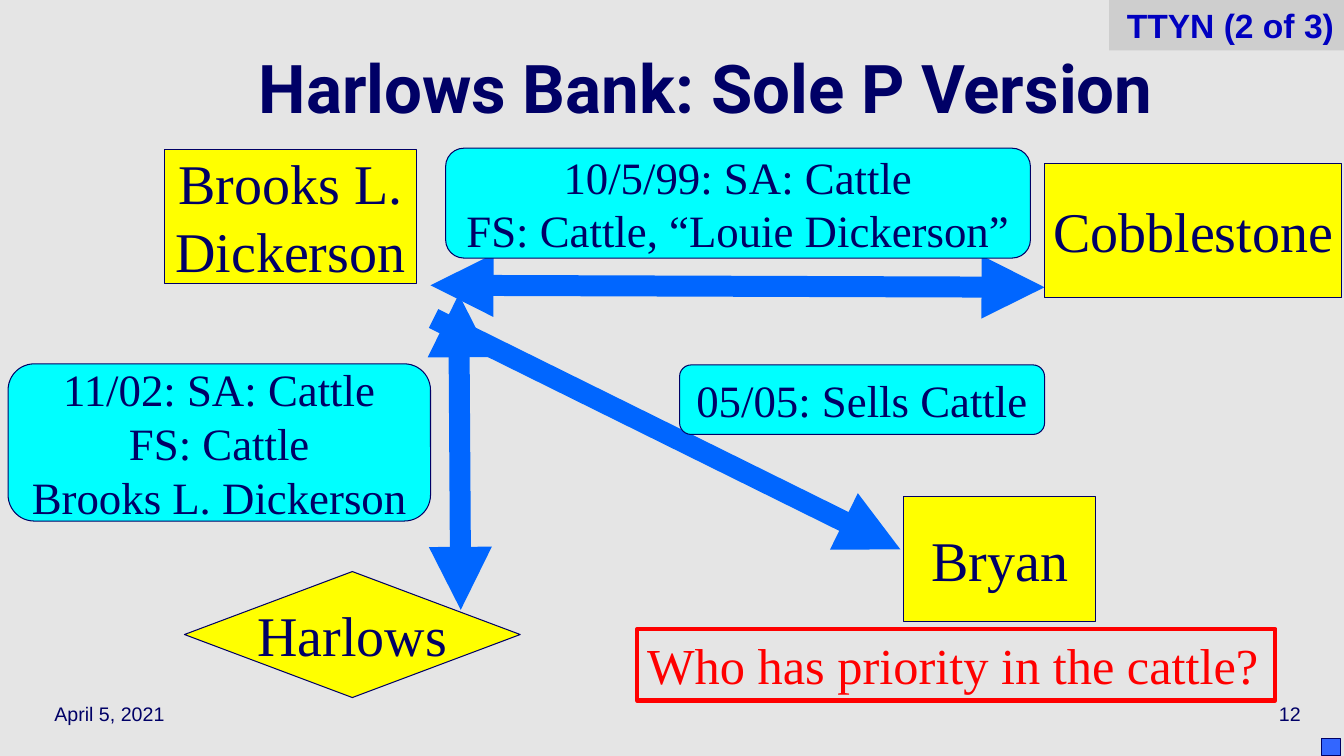
"""Builds the sole proprietor version of the bank priority slide."""
from lxml.etree import SubElement
from pptx import Presentation
from pptx.dml.color import RGBColor
from pptx.enum.shapes import MSO_CONNECTOR, MSO_SHAPE
from pptx.enum.text import MSO_ANCHOR, PP_ALIGN
from pptx.oxml.ns import qn
from pptx.util import Inches, Pt

NAVY = RGBColor(0x00, 0x00, 0x66)
YELLOW = RGBColor(0xFF, 0xFF, 0x00)
CYAN = RGBColor(0x00, 0xFF, 0xFF)
BLUE = RGBColor(0x00, 0x66, 0xFF)
MARKER_BLUE = RGBColor(0x33, 0x66, 0xFF)
TAG_BLUE = RGBColor(0x00, 0x00, 0xC0)
RED = RGBColor(0xFF, 0x00, 0x00)
PALE_GRAY = RGBColor(0xE5, 0xE5, 0xE5)
TAG_GRAY = RGBColor(0xCE, 0xCE, 0xCE)
SERIF = "Times New Roman"

prs = Presentation()
prs.slide_width, prs.slide_height = Inches(13.33), Inches(7.5)
s = prs.slides.add_slide(prs.slide_layouts[6])
s.background.fill.solid()
s.background.fill.fore_color.rgb = PALE_GRAY


def write(sp, lines, size, font=SERIF, color=NAVY, align=PP_ALIGN.CENTER,
          bold=False, anchor=MSO_ANCHOR.MIDDLE, wrap=True):
    tf = sp.text_frame
    tf.word_wrap = wrap
    tf.vertical_anchor = anchor
    for i, line in enumerate(lines):
        p = tf.paragraphs[0] if i == 0 else tf.add_paragraph()
        p.text = line
        p.alignment = align
        p.font.name, p.font.size, p.font.bold = font, Pt(size), bold
        p.font.color.rgb = color


def add_box(kind, at, fill=None, line=NAVY, width=0.75):
    sp = s.shapes.add_shape(kind, *map(Inches, at))
    sp.shadow.inherit = False
    if fill is None:
        sp.fill.background()
    else:
        sp.fill.solid()
        sp.fill.fore_color.rgb = fill
    if line is None:
        sp.line.fill.background()
    else:
        sp.line.color.rgb = line
        sp.line.width = Pt(width)
    return sp


for text, left, align in (("April 5, 2021", 0.44, PP_ALIGN.LEFT),
                          ("12", 10.22, PP_ALIGN.RIGHT)):
    footer = s.shapes.add_textbox(Inches(left), Inches(6.83), Inches(2.78), Inches(0.5))
    write(footer, [text], 14, "Arial", align=align)

title = s.shapes.add_textbox(Inches(0.89), Inches(0.33), Inches(12.22), Inches(1.25))
write(title, ["Harlows Bank: Sole P Version"], 48, "Roboto", bold=True)
title.text_frame.paragraphs[0].line_spacing = 0.7

arrows = [
    ((4.55, 2.92, 4.57, 6.05), ("headEnd", "tailEnd")),
    ((4.27, 2.83, 10.36, 2.85), ("headEnd", "tailEnd")),
    ((4.3, 3.16, 8.93, 5.45), ("tailEnd",)),
]
for ends, heads in arrows:
    arrow = s.shapes.add_connector(MSO_CONNECTOR.STRAIGHT, *map(Inches, ends))
    arrow.line.color.rgb = BLUE
    arrow.line.width = Pt(15)
    for head in heads:
        SubElement(arrow.line._get_or_add_ln(), qn(f"a:{head}"), type="triangle")
    SubElement(arrow._element.spPr, qn("a:effectLst"))

parties = [
    ("Brooks L. Dickerson", MSO_SHAPE.FLOWCHART_PROCESS, (1.63, 1.48, 2.5, 1.33)),
    ("Harlows", MSO_SHAPE.FLOWCHART_DECISION, (1.83, 5.67, 3.33, 1.25)),
    ("Cobblestone", MSO_SHAPE.FLOWCHART_PROCESS, (10.36, 1.62, 2.95, 1.33)),
    ("Bryan", MSO_SHAPE.FLOWCHART_PROCESS, (8.96, 4.93, 1.91, 1.24)),
]
for name, kind, at in parties:
    write(add_box(kind, at, YELLOW), [name], 40, wrap=" " in name)

events = [
    (["11/02: SA: Cattle", "FS: Cattle", "Brooks L. Dickerson"], (0.08, 3.61, 4.19, 1.56)),
    (["10/5/99: SA: Cattle", "FS: Cattle, “Louie Dickerson”"], (4.42, 1.47, 5.8, 1.09)),
    (["05/05: Sells Cattle"], (6.74, 3.62, 3.62, 0.69)),
]
for lines, at in events:
    write(add_box(MSO_SHAPE.FLOWCHART_ALTERNATE_PROCESS, at, CYAN), lines, 32)

question = add_box(MSO_SHAPE.RECTANGLE, (6.32, 6.24, 6.33, 0.71), line=RED, width=3)
write(question, ["Who has priority in the cattle?"], 36, color=RED,
      align=PP_ALIGN.LEFT, anchor=MSO_ANCHOR.TOP, wrap=False)

add_box(MSO_SHAPE.RECTANGLE, (13.11, 7.33, 0.19, 0.17), MARKER_BLUE)

tag = add_box(MSO_SHAPE.RECTANGLE, (11, 0, 2.33, 0.5), TAG_GRAY, line=None)
write(tag, ["TTYN (2 of 3)"], 24, "Arial", TAG_BLUE, PP_ALIGN.RIGHT,
      bold=True, anchor=MSO_ANCHOR.TOP)

prs.save("out.pptx")
